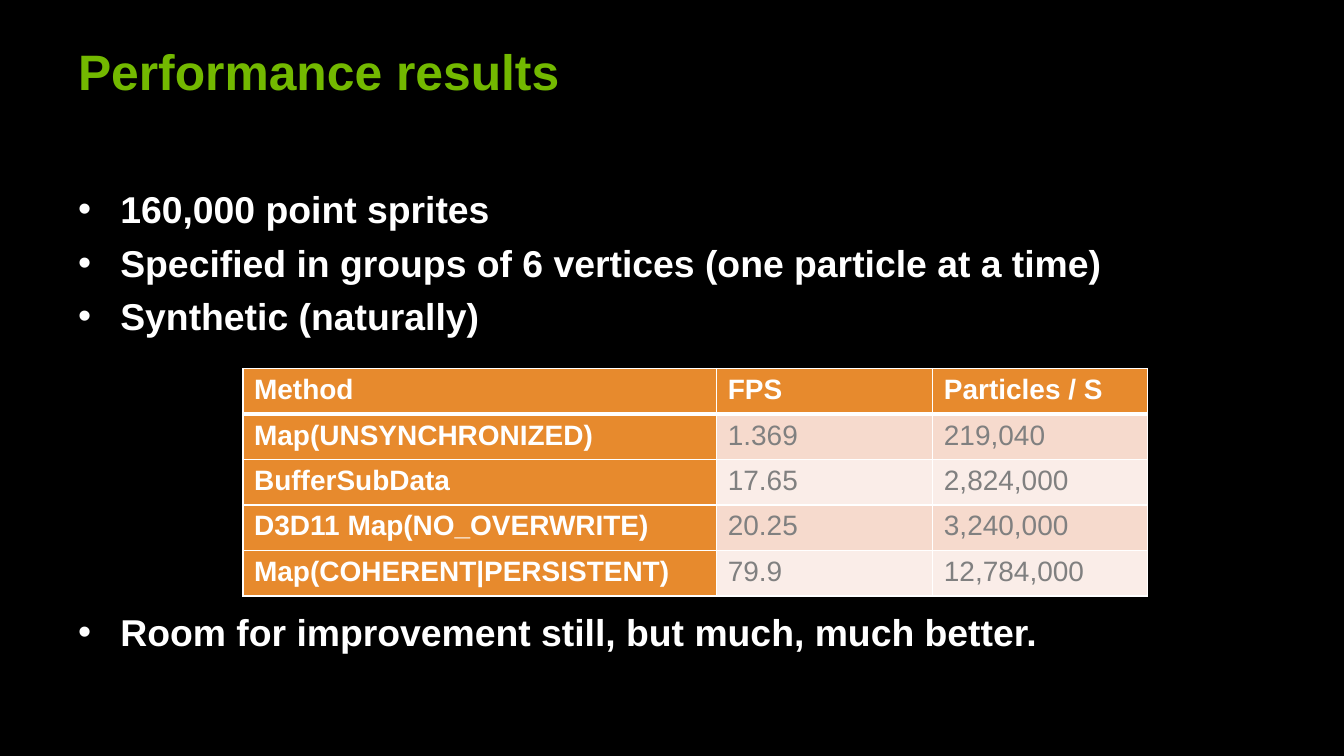
from dataclasses import dataclass

from lxml.etree import SubElement
from pptx import Presentation
from pptx.dml.color import RGBColor as Color
from pptx.oxml.ns import qn
from pptx.util import Cm, Pt


@dataclass(frozen=True)
class Theme:
    font: str = "Arial"
    background: str = "000000"
    title: str = "73B900"
    light: str = "FFFFFF"
    value: str = "808080"
    accent: str = "E78A2D"
    bands: tuple = ("F6DACD", "FAEDE8")
    title_size: int = 32
    body_size: int = 24
    table_size: int = 18


@dataclass(frozen=True)
class Box:
    """A region of the slide, in centimetres."""
    left: float
    top: float
    width: float
    height: float

    def lengths(self):
        return [Cm(n) for n in (self.left, self.top, self.width, self.height)]


THEME = Theme()
BULLETS = [
    "160,000 point sprites",
    "Specified in groups of 6 vertices (one particle at a time)",
    "Synthetic (naturally)",
]
CLOSING = "Room for improvement still, but much, much better."
RESULTS = [
    ("Method", "FPS", "Particles / S"),
    ("Map(UNSYNCHRONIZED)", "1.369", "219,040"),
    ("BufferSubData", "17.65", "2,824,000"),
    ("D3D11 Map(NO_OVERWRITE)", "20.25", "3,240,000"),
    ("Map(COHERENT|PERSISTENT)", "79.9", "12,784,000"),
]
COLUMN_SHARES = (4.23, 1.93, 1.92)


def style(paragraph, size, color, bold=True):
    for run in paragraph.runs:
        font = run.font
        font.name, font.size, font.bold = THEME.font, Pt(size), bold
        font.color.rgb = Color.from_string(color)


def add_text_frame(slide, box):
    frame = slide.shapes.add_textbox(*box.lengths()).text_frame
    frame.word_wrap = True
    frame.margin_top = Cm(0.23)
    return frame


def add_title(slide, box, text):
    frame = add_text_frame(slide, box)
    frame.text = text
    style(frame.paragraphs[0], THEME.title_size, THEME.title)


def add_bullet(paragraph):
    properties = paragraph._p.get_or_add_pPr()
    properties.set("marL", str(Cm(0.96)))
    properties.set("indent", str(-Cm(0.96)))
    SubElement(properties, qn("a:buFont"), typeface=THEME.font)
    SubElement(properties, qn("a:buChar"), char="•")


def add_body(slide, box, bullets, closing, closing_gap):
    """Write the bullets, then a closing one below a gap left for the table."""
    frame = add_text_frame(slide, box)
    frame.text = "\n".join([*bullets, closing])
    for paragraph in frame.paragraphs:
        add_bullet(paragraph)
        paragraph.space_before = Pt(5.8)
        style(paragraph, THEME.body_size, THEME.light)
    frame.paragraphs[0].space_before = Pt(0)
    frame.paragraphs[-1].space_before = Pt(closing_gap)


def set_border(cell, side, points):
    line = SubElement(cell._tc.get_or_add_tcPr(), qn(f"a:ln{side}"), w=str(Pt(points)))
    fill = SubElement(line, qn("a:solidFill"))
    SubElement(fill, qn("a:srgbClr"), val=THEME.light)


def fill_cell(cell, text, row, column):
    is_header = row == 0 or column == 0
    cell.text = text
    style(cell.text_frame.paragraphs[0], THEME.table_size,
          THEME.light if is_header else THEME.value, is_header)
    set_border(cell, "L", 1)
    set_border(cell, "R", 1)
    set_border(cell, "T", 3 if row == 1 else 1)
    set_border(cell, "B", 3 if row == 0 else 1)
    cell.fill.solid()
    color = THEME.accent if is_header else THEME.bands[(row - 1) % 2]
    cell.fill.fore_color.rgb = Color.from_string(color)


def add_results_table(slide, box, rows, shares):
    table = slide.shapes.add_table(len(rows), len(shares), *box.lengths()).table
    for column, share in zip(table.columns, shares):
        column.width = Cm(box.width * share / sum(shares))
    for row, texts in enumerate(rows):
        table.rows[row].height = Cm(box.height / len(rows))
        for column, text in enumerate(texts):
            fill_cell(table.cell(row, column), text, row, column)


def add_results_slide(presentation):
    slide = presentation.slides.add_slide(presentation.slide_layouts[6])
    background = slide.background.fill
    background.solid()
    background.fore_color.rgb = Color.from_string(THEME.background)
    add_title(slide, Box(1.52, 0.69, 25.58, 1.6), "Performance results")
    add_body(slide, Box(1.52, 3.99, 27.89, 11.81), BULLETS, CLOSING, closing_gap=174)
    add_results_table(slide, Box(5.51, 8.36, 20.52, 5.16), RESULTS, COLUMN_SHARES)


def main():
    presentation = Presentation()
    presentation.slide_width, presentation.slide_height = Cm(30.48), Cm(17.15)
    add_results_slide(presentation)
    presentation.save("out.pptx")


if __name__ == "__main__":
    main()
